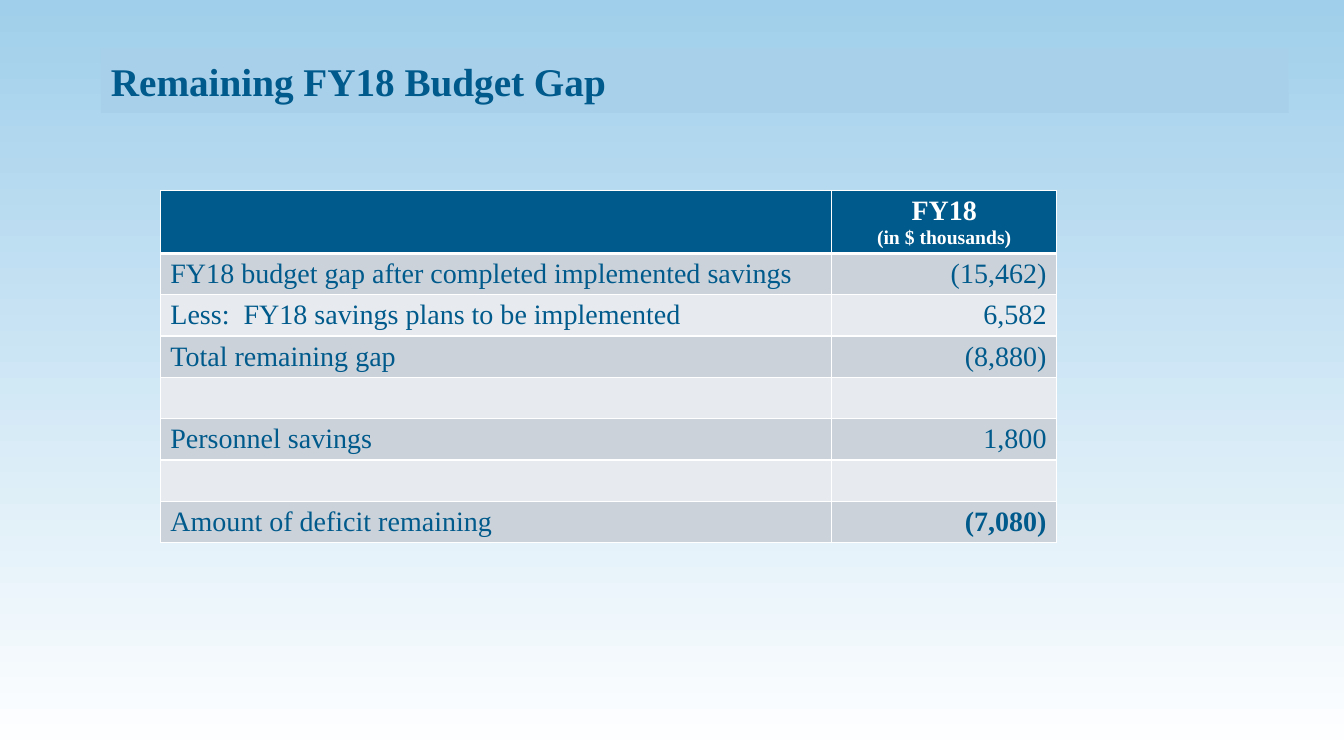
from pptx import Presentation
from pptx.dml.color import RGBColor
from pptx.enum.text import MSO_ANCHOR, PP_ALIGN
from pptx.oxml import parse_xml
from pptx.oxml.ns import nsdecls
from pptx.util import Inches, Pt

COLORS = {
    "sky": "A0CFEB",
    "white": "FFFFFF",
    "title_band": "A9D0EA",
    "navy": "005A8B",
    "dark_row": "CCD2DA",
    "light_row": "E7EAEE",
}
FONT = "Times New Roman"


def format_runs(paragraph, size, color, bold):
    for run in paragraph.runs:
        run.font.name = FONT
        run.font.size = Pt(size)
        run.font.bold = bold
        run.font.color.rgb = RGBColor.from_string(COLORS[color])


def add_border(cell, side, width):
    cell.fill._xPr.append(parse_xml(
        f'<a:{side} {nsdecls("a")} w="{Pt(width)}"><a:solidFill>'
        f'<a:srgbClr val="{COLORS["white"]}"/></a:solidFill></a:{side}>'))


presentation = Presentation()
presentation.slide_width = Inches(13.33)
presentation.slide_height = Inches(7.5)
slide = presentation.slides.add_slide(presentation.slide_layouts[5])

# Background gradient, top to bottom
background = slide.background.fill
background.gradient()
background.gradient_angle = 270
for stop, color in zip(background.gradient_stops, ("sky", "white")):
    stop.color.rgb = RGBColor.from_string(COLORS[color])

# Title
title = slide.shapes.title
title.left, title.top = Inches(1), Inches(0.48)
title.width, title.height = Inches(11.78), Inches(0.64)
title.fill.solid()
title.fill.fore_color.rgb = RGBColor.from_string(COLORS["title_band"])
title.text_frame.text = "Remaining FY18 Budget Gap"
title.text_frame.vertical_anchor = MSO_ANCHOR.MIDDLE
title.text_frame.paragraphs[0].alignment = PP_ALIGN.LEFT
format_runs(title.text_frame.paragraphs[0], 28, "navy", True)

# Budget table
budget_rows = [
    ("", "FY18\n(in $ thousands)"),
    ("FY18 budget gap after completed implemented savings", "(15,462)"),
    ("Less:  FY18 savings plans to be implemented", "6,582"),
    ("Total remaining gap", "(8,880)"),
    ("", ""),
    ("Personnel savings", "1,800"),
    ("", ""),
    ("Amount of deficit remaining", "(7,080)"),
]
table = slide.shapes.add_table(
    len(budget_rows), 2, Inches(1.59), Inches(1.89), Inches(8.89), Inches(3.49)).table
table.columns[0].width = Inches(6.66)
table.columns[1].width = Inches(2.23)

last_row = len(budget_rows) - 1
for row_index, values in enumerate(budget_rows):
    is_header = row_index == 0
    table.rows[row_index].height = Inches(0.62 if is_header else 0.41)
    row_fill = "navy" if is_header else "dark_row" if row_index % 2 else "light_row"
    for column_index, value in enumerate(values):
        cell = table.cell(row_index, column_index)
        add_border(cell, "lnL", 1)
        add_border(cell, "lnR", 1)
        add_border(cell, "lnT", 3 if row_index == 1 else 1)
        add_border(cell, "lnB", 3 if is_header else 1)
        cell.fill.solid()
        cell.fill.fore_color.rgb = RGBColor.from_string(COLORS[row_fill])
        cell.text_frame.text = value
        for line, paragraph in enumerate(cell.text_frame.paragraphs):
            if is_header:
                paragraph.alignment = PP_ALIGN.CENTER
                format_runs(paragraph, 14 if line else 20, "white", True)
            else:
                paragraph.alignment = PP_ALIGN.RIGHT if column_index else PP_ALIGN.LEFT
                is_deficit = row_index == last_row and column_index == 1
                format_runs(paragraph, 20, "navy", is_deficit)

presentation.save("out.pptx")
